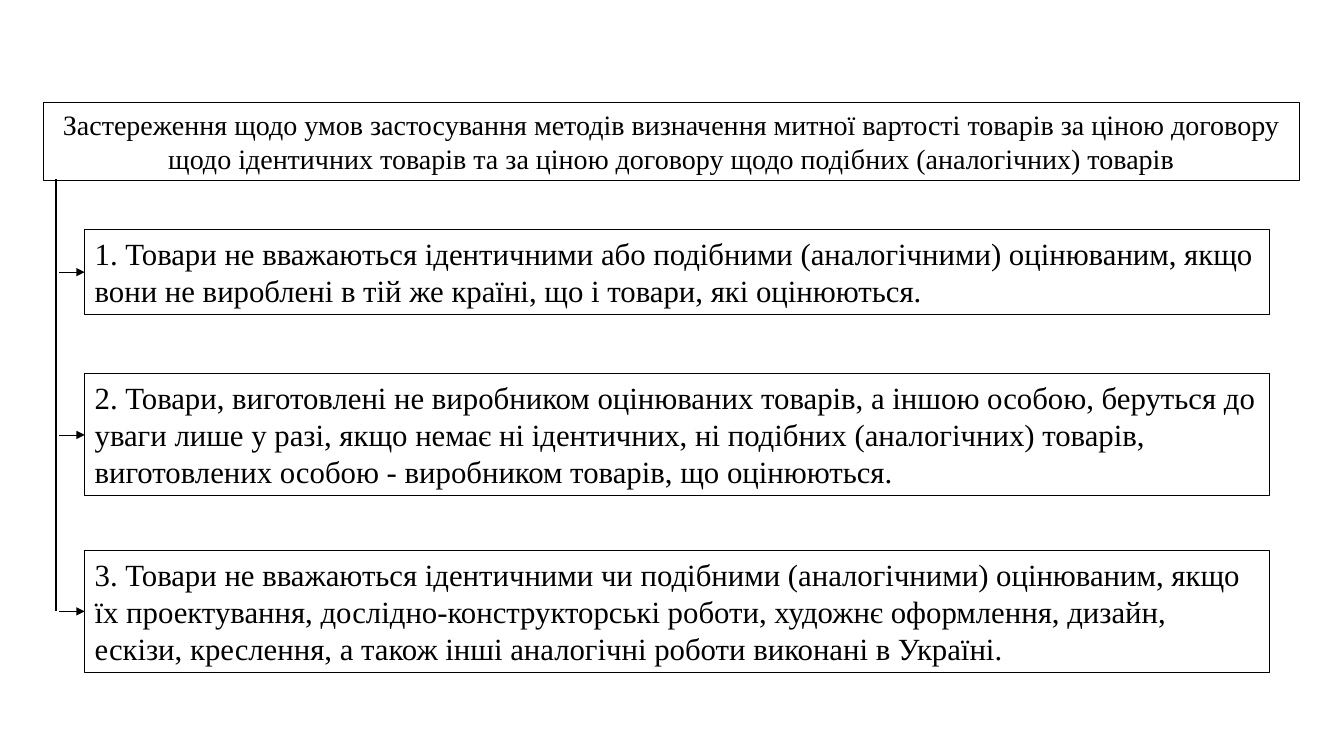
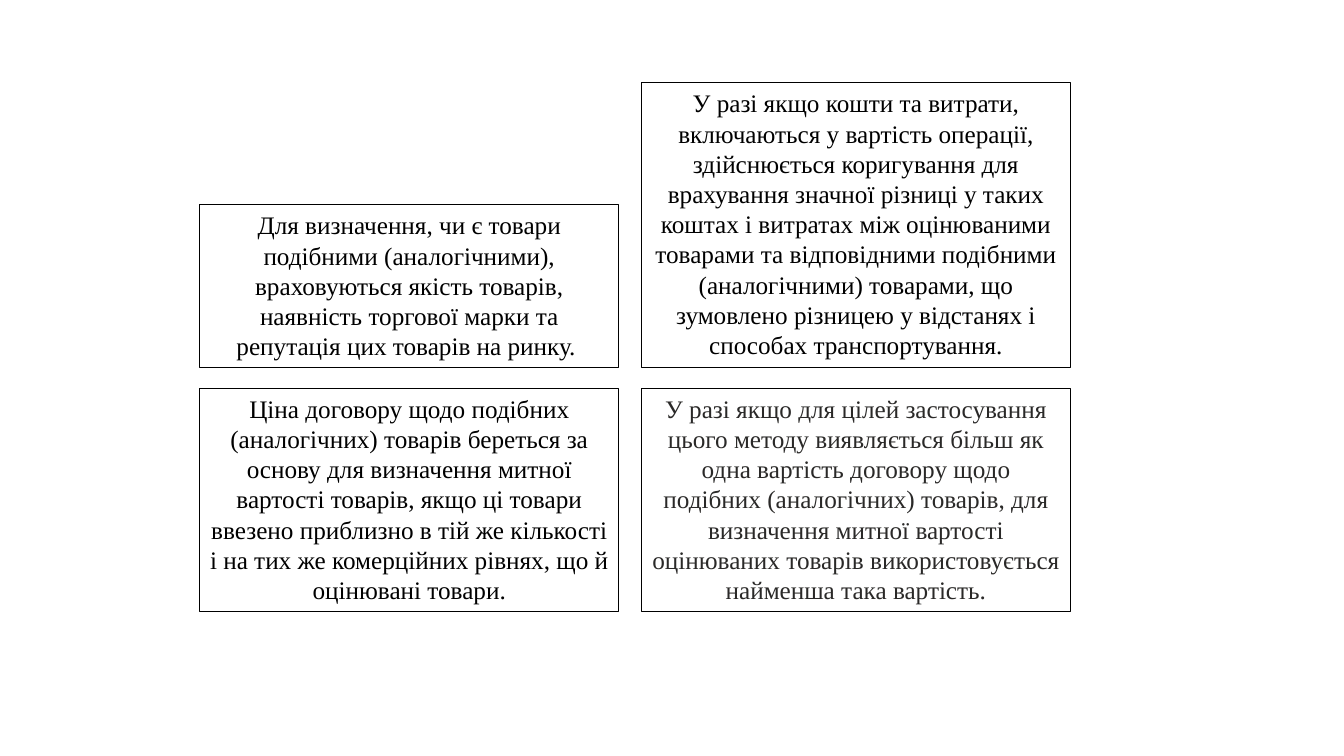
import dataclasses

import lxml.etree
import pptx
import pptx.dml.color
import pptx.enum.shapes
import pptx.enum.text
import pptx.oxml.ns
import pptx.util

Inches = pptx.util.Inches
Pt = pptx.util.Pt
LEFT = pptx.enum.text.PP_ALIGN.LEFT
CENTER = pptx.enum.text.PP_ALIGN.CENTER


@dataclasses.dataclass(frozen=True)
class Theme:
    font: str = "Times New Roman"
    ink: str = "000000"
    soft_ink: str = "2A2928"
    heading_size: float = 20
    item_size: float = 22
    card_size: float = 18
    border_width: float = 0.75
    spine_width: float = 1.5
    arrow_width: float = 0.5


THEME = Theme()

HEADING = (
    "Застереження щодо умов застосування методів визначення митної вартості товарів "
    "за ціною договору щодо ідентичних товарів та за ціною договору щодо подібних "
    "(аналогічних) товарів"
)

# Top, height and text of each reservation.
RESERVATIONS = [
    (2.28, 0.84,
     "1. Товари не вважаються ідентичними або подібними (аналогічними) оцінюваним, "
     "якщо вони не вироблені в тій же країні, що і товари, які оцінюються."),
    (3.71, 1.21,
     "2. Товари, виготовлені не виробником оцінюваних товарів, а іншою особою, "
     "беруться до уваги лише у разі, якщо немає ні ідентичних, ні подібних "
     "(аналогічних) товарів, виготовлених особою - виробником товарів, що оцінюються."),
    (5.46, 1.21,
     "3. Товари не вважаються ідентичними чи подібними (аналогічними) оцінюваним, "
     "якщо їх проектування, дослідно-конструкторські роботи, художнє оформлення, "
     "дизайн, ескізи, креслення, а також інші аналогічні роботи виконані в Україні."),
]

# Left and width of each column of cards.
LEFT_COLUMN = (1.98, 4.16)
RIGHT_COLUMN = (6.36, 4.26)
UPPER_ROW_BOTTOM = 3.65
LOWER_ROW_TOP = 3.85

# Column, top, height, colour and text of each card.
CARDS = [
    (LEFT_COLUMN, UPPER_ROW_BOTTOM - 1.62, 1.62, THEME.ink,
     "Для визначення, чи є товари подібними (аналогічними), враховуються якість "
     "товарів, наявність торгової марки та репутація цих товарів на ринку. "),
    (LEFT_COLUMN, LOWER_ROW_TOP, 2.22, THEME.ink,
     "Ціна договору щодо подібних (аналогічних) товарів береться за основу для "
     "визначення митної вартості товарів, якщо ці товари ввезено приблизно в тій же "
     "кількості і на тих же комерційних рівнях, що й оцінювані товари."),
    (RIGHT_COLUMN, LOWER_ROW_TOP, 2.22, THEME.soft_ink,
     "У разі якщо для цілей застосування цього методу виявляється більш як одна "
     "вартість договору щодо подібних (аналогічних) товарів, для визначення митної "
     "вартості оцінюваних товарів використовується найменша така вартість."),
    (RIGHT_COLUMN, UPPER_ROW_BOTTOM - 2.83, 2.83, THEME.ink,
     "У разі якщо кошти та витрати, включаються у вартість операції, здійснюється "
     "коригування для врахування значної різниці у таких коштах і витратах між "
     "оцінюваними товарами та відповідними подібними (аналогічними) товарами, що "
     "зумовлено різницею у відстанях і способах транспортування."),
]


def rgb(value):
    return pptx.dml.color.RGBColor.from_string(value)


def add_blank_slide(presentation):
    return presentation.slides.add_slide(presentation.slide_layouts[6])


def add_framed_text(slide, left, top, width, height, text, size,
                    alignment=CENTER, color=THEME.ink):
    box = slide.shapes.add_textbox(
        Inches(left), Inches(top), Inches(width), Inches(height))
    box.line.color.rgb = rgb(THEME.ink)
    box.line.width = Pt(THEME.border_width)
    frame = box.text_frame
    frame.word_wrap = True
    frame.auto_size = pptx.enum.text.MSO_AUTO_SIZE.SHAPE_TO_FIT_TEXT
    paragraph = frame.paragraphs[0]
    paragraph.text = text
    paragraph.alignment = alignment
    paragraph.font.name = THEME.font
    paragraph.font.size = Pt(size)
    paragraph.font.color.rgb = rgb(color)


def add_line(slide, start, end, width, arrow=False):
    """Draw a straight line between two (x, y) points, with an optional arrowhead at the end."""
    connector = slide.shapes.add_connector(
        pptx.enum.shapes.MSO_CONNECTOR.STRAIGHT,
        *(Inches(value) for value in (*start, *end)))
    connector.line.color.rgb = rgb(THEME.ink)
    connector.line.width = Pt(width)
    qn = pptx.oxml.ns.qn
    properties = connector.element.find(qn("p:spPr"))
    if arrow:
        outline = properties.find(qn("a:ln"))
        lxml.etree.SubElement(outline, qn("a:tailEnd"), type="triangle")
    lxml.etree.SubElement(properties, qn("a:effectLst"))


def build_reservations_slide(presentation):
    slide = add_blank_slide(presentation)
    spine_x, item_left = 0.56, 0.84
    middles = [top + height / 2 for top, height, _ in RESERVATIONS]
    add_line(slide, (spine_x, 1.78), (spine_x, middles[-1]), THEME.spine_width)
    add_framed_text(slide, 0.43, 1.02, 12.46, 0.77, HEADING, THEME.heading_size)
    for (top, height, text), middle in zip(RESERVATIONS, middles):
        add_framed_text(slide, item_left, top, 11.75, height, text,
                        THEME.item_size, LEFT)
        add_line(slide, (spine_x + 0.03, middle), (item_left, middle),
                 THEME.arrow_width, arrow=True)


def build_cards_slide(presentation):
    slide = add_blank_slide(presentation)
    for (left, width), top, height, color, text in CARDS:
        add_framed_text(slide, left, top, width, height, text,
                        THEME.card_size, color=color)


def main():
    presentation = pptx.Presentation()
    presentation.slide_width = Inches(13.33)
    presentation.slide_height = Inches(7.5)
    build_reservations_slide(presentation)
    build_cards_slide(presentation)
    presentation.save("out.pptx")


if __name__ == "__main__":
    main()
